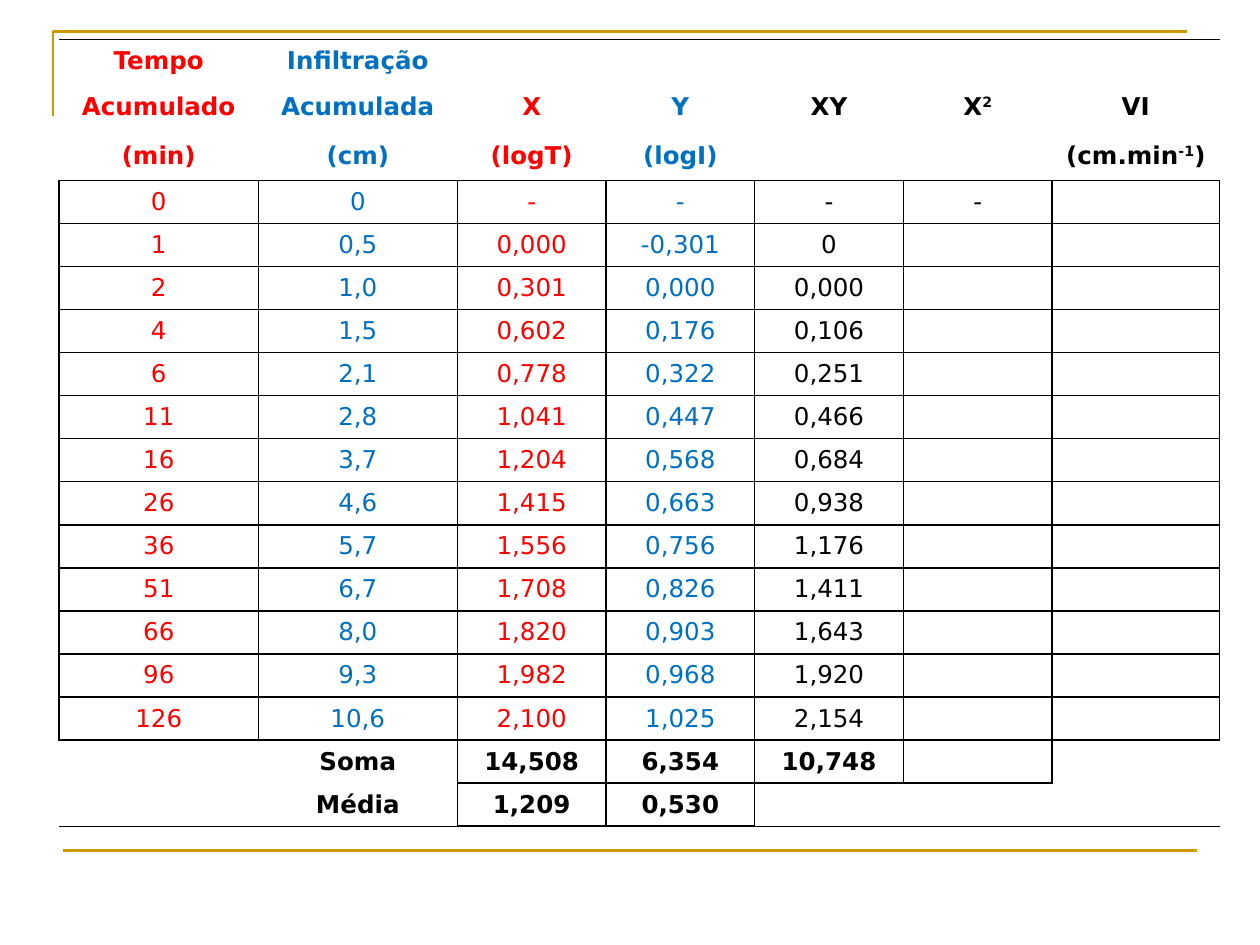
from lxml import etree
from pptx import Presentation
from pptx.dml.color import RGBColor
from pptx.enum import shapes, text
from pptx.oxml import ns
from pptx.util import Inches, Pt

RED = RGBColor(0xFF, 0x00, 0x00)
BLUE = RGBColor(0x00, 0x70, 0xC0)
BLACK = RGBColor(0x00, 0x00, 0x00)
GOLD = RGBColor(0xCC, 0x99, 0x00)
FONT = "DejaVu Sans"

HEAD = [
    ["Tempo", "Infiltração"],
    ["Acumulado", "Acumulada", "X", "Y", "XY", "X^2", "VI"],
    ["(min)", "(cm)", "(logT)", "(logI)", "", "", "(cm.min^-1^)"],
]
BODY = [
    ["0", "0", "-", "-", "-", "-"],
    ["1", "0,5", "0,000", "-0,301", "0"],
    ["2", "1,0", "0,301", "0,000", "0,000"],
    ["4", "1,5", "0,602", "0,176", "0,106"],
    ["6", "2,1", "0,778", "0,322", "0,251"],
    ["11", "2,8", "1,041", "0,447", "0,466"],
    ["16", "3,7", "1,204", "0,568", "0,684"],
    ["26", "4,6", "1,415", "0,663", "0,938"],
    ["36", "5,7", "1,556", "0,756", "1,176"],
    ["51", "6,7", "1,708", "0,826", "1,411"],
    ["66", "8,0", "1,820", "0,903", "1,643"],
    ["96", "9,3", "1,982", "0,968", "1,920"],
    ["126", "10,6", "2,100", "1,025", "2,154"],
]
FOOT = [
    ["", "Soma", "14,508", "6,354", "10,748"],
    ["", "Média", "1,209", "0,530"],
]
ROWS = HEAD + BODY + FOOT
WIDTHS = [1.58, 1.58, 1.18, 1.18, 1.18, 1.18, 1.33]
TINTS = [RED, BLUE, RED, BLUE, BLACK, BLACK, BLACK]
SIDES = [("lnL", 0, -1), ("lnR", 0, 1), ("lnT", -1, 0), ("lnB", 1, 0)]
TOTAL = 6.25
TALL = 0.39
SUM = len(HEAD) + len(BODY)
LAST = len(ROWS) - 1


def boxed(row, col):
    if row == SUM:
        return 2 <= col <= 5
    if row == LAST:
        return 2 <= col <= 3
    return len(HEAD) <= row < SUM and 0 <= col < len(WIDTHS)


def border(cell, tag, width, pos):
    line = etree.Element(ns.qn("a:" + tag), w=str(Pt(width)))
    if width:
        fill = etree.SubElement(line, ns.qn("a:solidFill"))
        etree.SubElement(fill, ns.qn("a:srgbClr"), val=str(BLACK))
    else:
        etree.SubElement(line, ns.qn("a:noFill"))
    cell._tc.get_or_add_tcPr().insert(pos, line)


prs = Presentation()
prs.slide_width, prs.slide_height = Inches(10), Inches(7.5)
slide = prs.slides.add_slide(prs.slide_layouts[6])

path = slide.shapes.build_freeform(Inches(0.42), Inches(0.92))
path.add_line_segments(
    [(Inches(0.42), Inches(0.25)), (Inches(9.42), Inches(0.25))], close=False)
frame = path.convert_to_shape()
frame.shadow.inherit = False
frame.fill.background()
rule = slide.shapes.add_connector(
    shapes.MSO_CONNECTOR.STRAIGHT,
    Inches(0.5), Inches(6.75), Inches(9.5), Inches(6.75))
etree.SubElement(rule._element.spPr, ns.qn("a:effectLst"))
for mark in (frame, rule):
    mark.line.color.rgb = GOLD
    mark.line.width = Pt(1.5)

table = slide.shapes.add_table(
    len(ROWS), len(WIDTHS), Inches(0.47), Inches(0.31),
    Inches(sum(WIDTHS)), Inches(TOTAL)).table
table.first_row = table.horz_banding = False
for col, width in enumerate(WIDTHS):
    table.columns[col].width = Inches(width)
short = (TOTAL - 2 * TALL) / (len(ROWS) - 2)

for row, words in enumerate(ROWS):
    table.rows[row].height = Inches(TALL if row in (1, 2) else short)
    for col, tint in enumerate(TINTS):
        cell = table.cell(row, col)
        cell.margin_left = cell.margin_right = 0
        cell.margin_top = cell.margin_bottom = 0
        cell.vertical_anchor = text.MSO_ANCHOR.MIDDLE
        cell.fill.background()
        for pos, (tag, down, over) in enumerate(SIDES):
            near = row + down
            if boxed(row, col) or boxed(near, col + over):
                width = 1
            else:
                width = 0 if 0 <= near <= LAST else 0.5
            border(cell, tag, width, pos)

        para = cell.text_frame.paragraphs[0]
        para.alignment = text.PP_ALIGN.CENTER
        para.font.size = Pt(14)
        word = words[col] if col < len(words) else ""
        for part, piece in enumerate(word.split("^") if word else []):
            run = para.add_run()
            run.text = piece
            run.font.name = FONT
            run.font.size = Pt(14)
            run.font.bold = not len(HEAD) <= row < SUM
            run.font.color.rgb = BLACK if row >= SUM else tint
            if part % 2:
                run.font._element.set("baseline", "30000")

prs.save("out.pptx")
